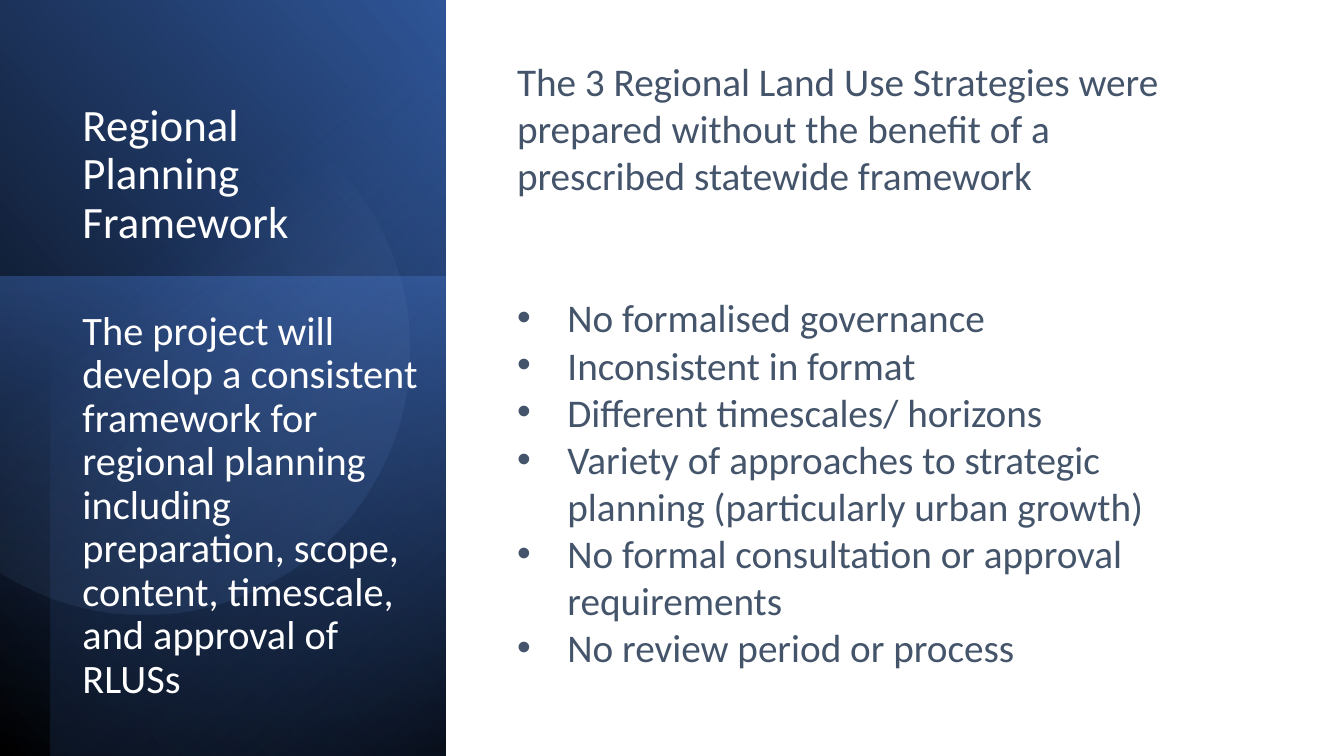
import math

from pptx import Presentation
from pptx.dml.color import RGBColor
from pptx.enum import shapes, text
from pptx.oxml import parse_xml
from pptx.oxml.ns import nsdecls, qn
from pptx.util import Inches, Pt

# Content
HEADING = "Regional Planning Framework"
AIM = ("The project will develop a consistent framework for regional planning "
       "including preparation, scope, content, timescale, and approval of RLUSs")
INTRO = ("The 3 Regional Land Use Strategies were prepared without the benefit "
         "of a prescribed statewide framework")
ISSUES = [
    "No formalised governance",
    "Inconsistent in format",
    "Different timescales/ horizons",
    "Variety of approaches to strategic planning (particularly urban growth)",
    "No formal consultation or approval requirements",
    "No review period or process",
]

THEME = {
    "font": "Calibri", "light": "FFFFFF", "body": "44546A",
    "heading_size": 32, "aim_size": 28.8, "body_size": 28,
}

# Side panel layers: box, rotation, flipped, gradient stops (position, colour, alpha), angle
PANEL_LAYERS = [
    ((-1.55, 1.55, 7.52, 4.42), 90, True,
     [(0, "000000", 100), (100, "2F5597", 100)], 310),
    ((-0.17, 2.91, 4.76, 4.42), 270, False,
     [(0, "4472C4", 50), (100, "203864", 0)], 190),
    ((-1.29, 1.79, 7.5, 3.92), 270, True,
     [(0, "000000", 59), (69, "4472C4", 0)], 220),
]
DISC_CENTRE, DISC_RADIUS = (1.43, 3.47), 2.63
DISC_STOPS, DISC_ANGLE = [(39, "8FAADC", 0), (100, "2F5597", 26)], 51.6


def paint_gradient(shape, stops, angle):
    shape.shadow.inherit = False
    shape.line.fill.background()
    shape.fill.background()
    stop_xml = "".join(
        f'<a:gs pos="{position * 1000}"><a:srgbClr val="{colour}">'
        f'<a:alpha val="{alpha * 1000}"/></a:srgbClr></a:gs>'
        for position, colour, alpha in stops)
    gradient = parse_xml(
        f'<a:gradFill {nsdecls("a")} rotWithShape="1"><a:gsLst>{stop_xml}</a:gsLst>'
        f'<a:lin ang="{round(angle * 60000)}" scaled="0"/></a:gradFill>')
    properties = shape._element.spPr
    properties.replace(properties.find(qn("a:noFill")), gradient)


def add_text(slide, box, paragraphs, size, colour, anchor=text.MSO_ANCHOR.TOP, spacing=None):
    frame = slide.shapes.add_textbox(*map(Inches, box)).text_frame
    frame.word_wrap = True
    frame.vertical_anchor = anchor
    for index, line in enumerate(paragraphs):
        paragraph = frame.add_paragraph() if index else frame.paragraphs[0]
        paragraph.text = line
        paragraph.line_spacing = spacing
        paragraph.font.name = THEME["font"]
        paragraph.font.size = Pt(size)
        paragraph.font.color.rgb = RGBColor.from_string(colour)
    return frame.paragraphs


def add_bullet(paragraph):
    properties = paragraph._p.get_or_add_pPr()
    properties.set("marL", str(Inches(0.5)))
    properties.set("indent", str(-Inches(0.5)))
    properties.append(parse_xml(f'<a:buFont {nsdecls("a")} typeface="Arial"/>'))
    properties.append(parse_xml(f'<a:buChar {nsdecls("a")} char="•"/>'))


def main():
    presentation = Presentation()
    presentation.slide_width, presentation.slide_height = Inches(13.33), Inches(7.5)
    slide = presentation.slides.add_slide(presentation.slide_layouts[6])

    # Side panel
    for box, rotation, flipped, stops, angle in PANEL_LAYERS:
        layer = slide.shapes.add_shape(shapes.MSO_SHAPE.RECTANGLE, *map(Inches, box))
        layer.rotation = rotation
        if flipped:
            layer._element.spPr.xfrm.set("flipH", "1")
        paint_gradient(layer, stops, angle)

    # Disc, cut off by the left edge of the slide
    centre_x, centre_y = DISC_CENTRE
    sweep = math.acos(-centre_x / DISC_RADIUS)
    steps = 120
    angles = [sweep * (2 * step / steps - 1) for step in range(steps + 1)]
    rim = [(Inches(centre_x + DISC_RADIUS * math.cos(a)),
            Inches(centre_y + DISC_RADIUS * math.sin(a))) for a in angles]
    builder = slide.shapes.build_freeform(*rim[0])
    builder.add_line_segments(rim[1:], close=True)
    paint_gradient(builder.convert_to_shape(), DISC_STOPS, DISC_ANGLE)

    # Panel text
    add_text(slide, (0.72, 0.88, 3.3, 1.63), [HEADING], THEME["heading_size"],
             THEME["light"], text.MSO_ANCHOR.BOTTOM, 0.9)
    add_text(slide, (0.72, 3.03, 3.6, 3.55), [AIM], THEME["aim_size"],
             THEME["light"], spacing=0.9)

    # Introduction and issues
    intro, *issues = add_text(slide, (5.03, 0.52, 6.67, 6.9), [INTRO, *ISSUES],
                              THEME["body_size"], THEME["body"])
    intro.space_after = Pt(68)
    for issue in issues:
        add_bullet(issue)

    presentation.save("out.pptx")


if __name__ == "__main__":
    main()
